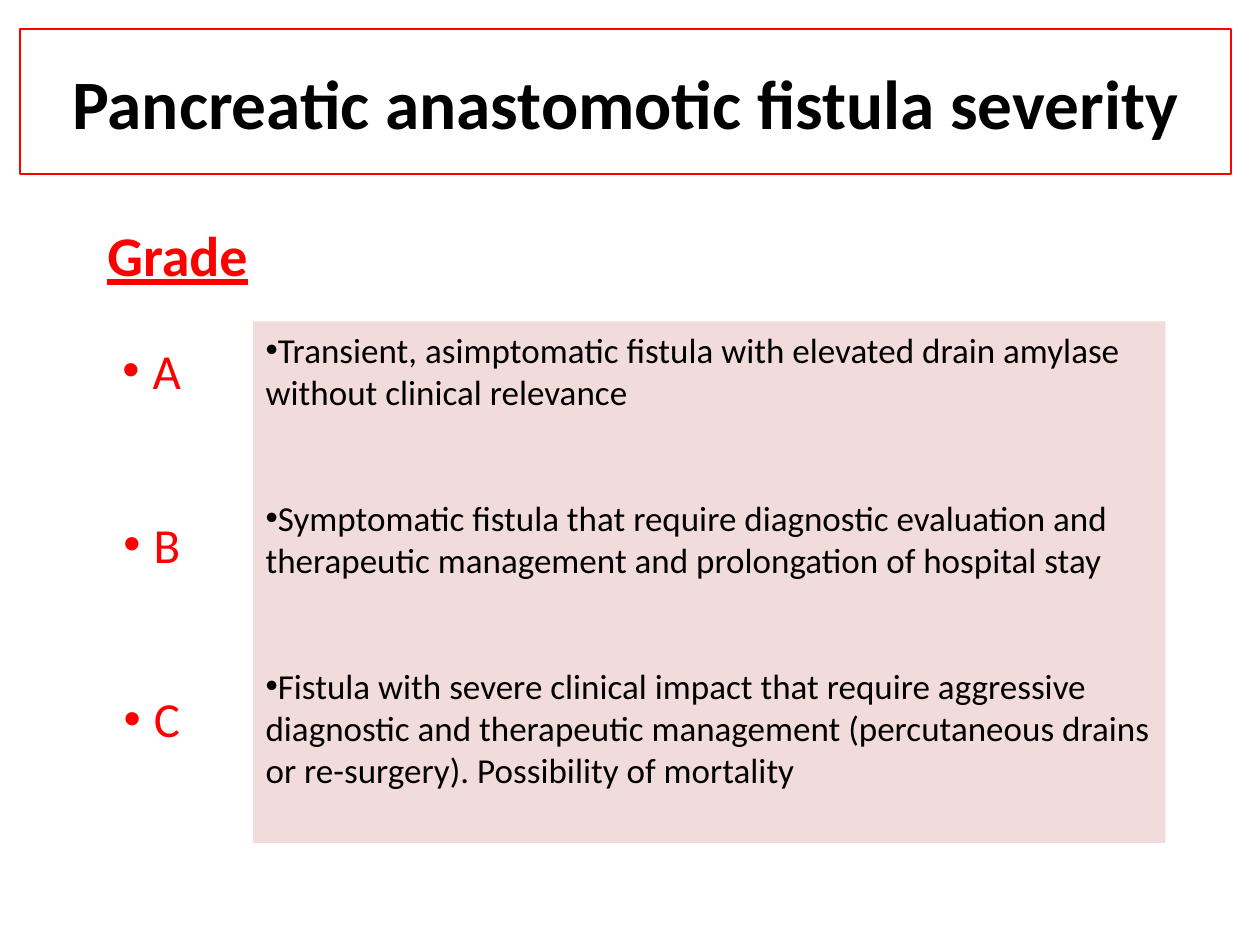
from dataclasses import dataclass

from lxml.etree import SubElement
from pptx import Presentation
from pptx.dml.color import RGBColor as Color
from pptx.enum.shapes import MSO_SHAPE as Kind
from pptx.enum.text import MSO_ANCHOR as Anchor, MSO_AUTO_SIZE as Fit, PP_ALIGN as Align
from pptx.oxml.ns import qn
from pptx.util import Inches, Pt


@dataclass(frozen=True)
class Theme:
    font: str = "Calibri"
    black: Color = Color(0, 0, 0)
    red: Color = Color(255, 0, 0)
    pink: Color = Color(0xF2, 0xDC, 0xDB)
    title: float = 39.6
    head: float = 32
    grade: float = 28
    note: float = 20


GRADES = {
    "A": "Transient, asimptomatic fistula with elevated drain amylase "
         "without clinical relevance",
    "B": "Symptomatic fistula that require diagnostic evaluation and "
         "therapeutic management and prolongation of hospital stay",
    "C": "Fistula with severe clinical impact that require aggressive diagnostic "
         "and therapeutic management (percutaneous drains or re-surgery). "
         "Possibility of mortality",
}


def assign(item, values):
    for name, value in values.items():
        setattr(item, name, value)


class Deck:
    def __init__(self, theme):
        self.theme = theme
        self.file = Presentation()
        assign(self.file, {"slide_width": Inches(10), "slide_height": Inches(7.5)})
        self.slide = self.file.slides.add_slide(self.file.slide_layouts[0])

    def place(self, shape, box):
        sides = ("left", "top", "width", "height")
        assign(shape, dict(zip(sides, map(Inches, box))))

    def add_text(self, para, text, align, **look):
        run = para.add_run()
        run.text = text
        para.alignment = align
        color = look.pop("color")
        assign(run.font, {"name": self.theme.font, **look})
        run.font.color.rgb = color

    def holder(self, index, box, text, anchor, **look):
        shape = self.slide.placeholders[index]
        self.place(shape, box)
        frame = shape.text_frame
        assign(frame, {"word_wrap": True, "auto_size": Fit.NONE,
                       "vertical_anchor": anchor})
        self.add_text(frame.paragraphs[0], text, Align.CENTER, **look)
        return shape

    def bullets(self, shape, items, align, gap, inset, margins, **look):
        """Fill a shape with bullets; margins are left, right and first-line indent."""
        frame = shape.text_frame
        assign(frame, {"word_wrap": True, "auto_size": Fit.NONE,
                       "vertical_anchor": Anchor.TOP, "margin_top": Inches(inset)})
        for row, text in enumerate(items):
            para = frame.add_paragraph() if row else frame.paragraphs[0]
            self.add_text(para, text, align, **look)
            para.space_before = Pt(gap if row else 0)
            props = para._p.get_or_add_pPr()
            for key, size in zip(("marL", "marR", "indent"), margins):
                props.set(key, str(Inches(size)))
            SubElement(props, qn("a:buFont"), typeface="Arial")
            SubElement(props, qn("a:buChar"), char="•")

    def label(self, box):
        return self.slide.shapes.add_textbox(*map(Inches, box))

    def panel(self, box, fill):
        shape = self.slide.shapes.add_shape(Kind.RECTANGLE, *map(Inches, box))
        shape.shadow.inherit = False
        shape.fill.solid()
        shape.fill.fore_color.rgb = fill
        shape.line.fill.background()
        return shape


def main():
    theme = Theme()
    deck = Deck(theme)
    title = deck.holder(0, (0.16, 0.23, 9.61, 1.15),
                        "Pancreatic anastomotic fistula severity", Anchor.MIDDLE,
                        size=Pt(theme.title), bold=True, color=theme.black)
    title.line.color.rgb = theme.red
    title.line.width = Pt(1.5)
    deck.holder(1, (0.27, 1.7, 2.28, 0.71), "Grade", Anchor.TOP,
                size=Pt(theme.head), bold=True, underline=True, color=theme.red)
    deck.bullets(deck.label((0.83, 2.65, 0.87, 3.78)), GRADES, Align.CENTER,
                 gap=66, inset=0.05, margins=(0.24, 0.12, -0.24),
                 size=Pt(theme.grade), color=theme.red)
    deck.bullets(deck.panel((2.01, 2.55, 7.24, 4.14), theme.pink), GRADES.values(),
                 Align.LEFT, gap=48, inset=0.06, margins=(0, 0, 0),
                 size=Pt(theme.note), color=theme.black)
    deck.file.save("out.pptx")


if __name__ == "__main__":
    main()
